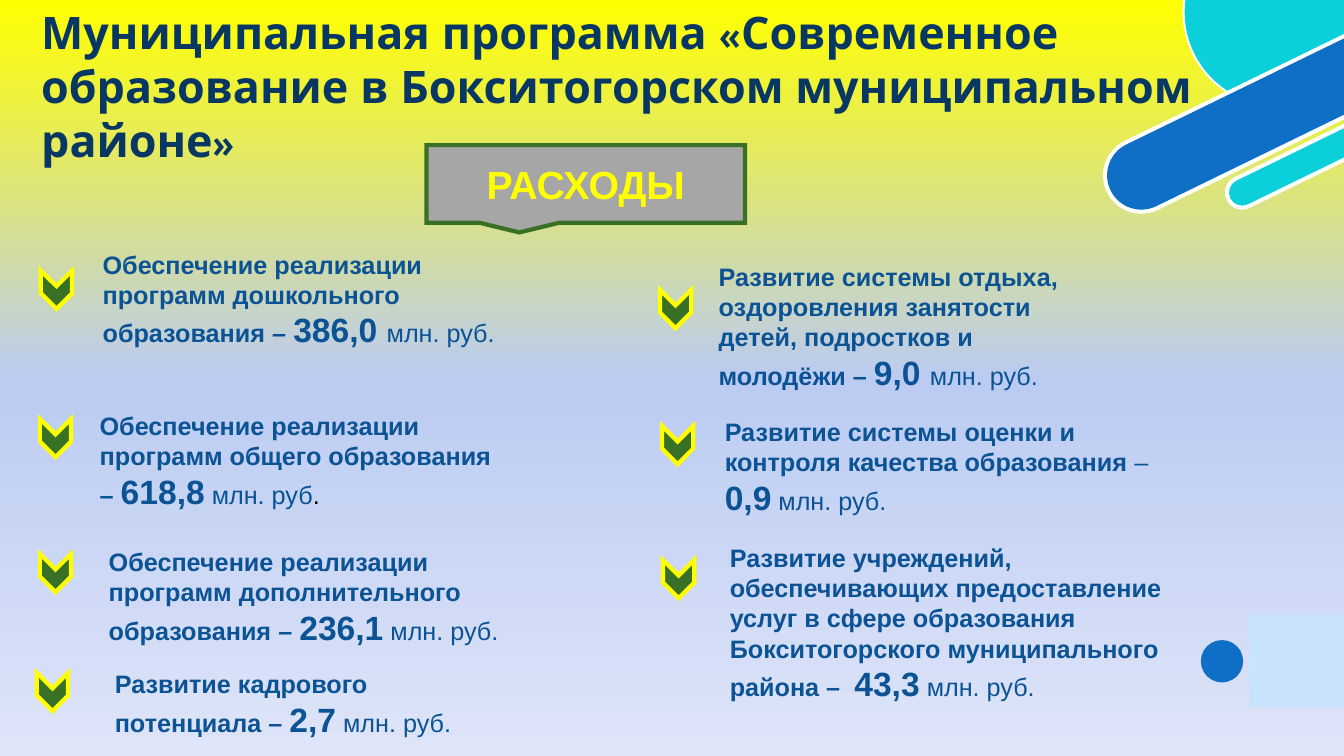
from copy import deepcopy
from math import asin, cos, pi, radians, sin, tan

from lxml.etree import SubElement
from pptx import Presentation
from pptx.dml.color import RGBColor
from pptx.enum.shapes import MSO_SHAPE
from pptx.enum.text import MSO_ANCHOR, PP_ALIGN
from pptx.oxml.ns import qn
from pptx.util import Pt

PX = 9144
WIDTH, HEIGHT = 1333, 750
TILT = radians(26)

COLORS = {
    "yellow": "FFFF00",
    "sky": "BBCBF2",
    "mist": "DEE5F8",
    "blue": "0F6FC6",
    "teal": "0BD0D9",
    "white": "FFFFFF",
    "pale": "C8E3FB",
    "navy": "083763",
    "text": "0B5394",
    "black": "000000",
    "green": "387026",
    "gray": "A6A6A6",
}

EXPENSES = [
    ((92, 242, 440, 111), (37, 272), [
        ("Обеспечение реализации программ дошкольного образования", 18, "b"),
        (" – ", 18, "bi"), ("386,0 ", 24, "b"), ("млн. руб.", 18, "")]),
    ((89, 402, 425, 111), (36, 419), [
        ("Обеспечение реализации программ общего образования – ", 18, "b"),
        ("618,8", 24, "b"), (" ", 18, "b"), ("млн. руб", 18, ""),
        (".", 18, "", "black")]),
    ((98, 537, 455, 111), (36, 553), [
        ("Обеспечение реализации программ дополнительного образования ", 18, "b"),
        ("– ", 18, "bi"), ("236,1", 24, "b"), (" ", 18, "b"),
        ("млн. руб.", 18, "")]),
    ((104, 658, 375, 81), (33, 671), [
        ("Развитие кадрового потенциала – ", 18, "b"),
        ("2,7", 24, "b"), (" ", 18, "b"), ("млн. руб.", 18, "")]),
    ((703, 254, 380, 141), (651, 291), [
        ("Развитие системы отдыха, оздоровления занятости детей, "
         "подростков и молодёжи – ", 18, "b"),
        ("9,0 ", 24, "b"), ("млн. руб.", 18, "")]),
    ((709, 408, 476, 111), (653, 426), [
        ("Развитие системы оценки и контроля качества образования ", 18, "b"),
        ("– ", 18, ""), ("0,9", 24, "b"), (" млн. руб.", 18, "")]),
    ((714, 533, 456, 172), (654, 559), [
        ("Развитие учреждений, обеспечивающих предоставление услуг в сфере "
         "образования Бокситогорского муниципального района –  ", 18, "b"),
        ("43,3", 24, "b"), (" ", 18, "b"), ("млн. руб.", 18, "")]),
]


def rgb(color):
    return RGBColor.from_string(COLORS[color])


def emu(lengths):
    return [round(length * PX) for length in lengths]


def paint(shape, fill, line=None):
    shape.shadow.inherit = False
    shape.fill.solid()
    shape.fill.fore_color.rgb = rgb(fill)
    if line:
        shape.line.color.rgb = rgb(line)
        shape.line.width = Pt(3)
        outline = shape.element.find(".//" + qn("a:ln"))
        SubElement(outline, qn("a:miter")).set("lim", "800000")
    else:
        shape.line.fill.background()


def add_background(page):
    fill = page.background.fill
    fill.gradient()
    fill.gradient_angle = 270
    stop_list = page.element.find(".//" + qn("a:gsLst"))
    stop_list.insert(1, deepcopy(stop_list[0]))
    stops = zip(fill.gradient_stops, (0, 0.5, 1), ("yellow", "sky", "mist"))
    for stop, position, color in stops:
        stop.position = position
        stop.color.rgb = rgb(color)


def add_shape(page, kind, frame, fill, line=None):
    shape = page.shapes.add_shape(kind, *emu(frame))
    paint(shape, fill, line)
    return shape


def arc(x, y, radius, start, end):
    step = (end - start) / 2
    reach = 4 / 3 * tan(step / 4)

    def place(angle, pull):
        return (x + radius * (cos(angle) - pull * sin(angle)),
                y + radius * (sin(angle) + pull * cos(angle)))

    points = [place(start, 0)]
    for angle in (start, start + step):
        points += [place(angle, reach), place(angle + step, -reach),
                   place(angle + step, 0)]
    return points


def add_curved(page, curve, corners, fill):
    points = [emu(point) for point in curve + corners]
    builder = page.shapes.build_freeform(*points[0], scale=1.0)
    builder.add_line_segments(points[1:], close=True)
    shape = builder.convert_to_shape()
    paint(shape, fill)
    segments = shape.element.findall(".//" + qn("a:lnTo"))
    for first in range(0, len(curve) - 1, 3):
        bend, *others = segments[first:first + 3]
        bezier = bend.getparent().makeelement(qn("a:cubicBezTo"))
        bend.addprevious(bezier)
        for segment in (bend, *others):
            bezier.append(segment[0])
            segment.getparent().remove(segment)


def add_disc(page, x, y, radius, fill):
    curve = arc(x, y, radius, pi / 3, pi + asin(y / radius))
    add_curved(page, curve, [(WIDTH, 0), (WIDTH, 40)], fill)


def add_bar(page, x, y, radius, fill):
    edge = y - (WIDTH - x) * tan(TILT)
    half = radius / cos(TILT)
    curve = arc(x, y, radius, pi / 2 - TILT, 3 * pi / 2 - TILT)
    add_curved(page, curve, [(WIDTH, edge - half), (WIDTH, edge + half)], fill)


def add_runs(para, runs, font):
    for text, size, style, color in runs:
        span = para.add_run()
        span.text = text
        span.font.name = font
        span.font.size = Pt(size)
        span.font.bold = "b" in style
        span.font.italic = "i" in style
        span.font.color.rgb = rgb(color)


def add_text(page, frame, runs, font="Arial"):
    box = page.shapes.add_textbox(*emu(frame))
    box.text_frame.word_wrap = True
    add_runs(box.text_frame.paragraphs[0], runs, font)


def add_expense(page, frame, corner, runs):
    colored = [run if len(run) == 4 else (*run, "text") for run in runs]
    add_text(page, frame, colored)
    marker = add_shape(page, MSO_SHAPE.CHEVRON, (*corner, 38, 31), "green", "yellow")
    marker.rotation = 90


def add_callout(page):
    callout = add_shape(page, MSO_SHAPE.RECTANGULAR_CALLOUT,
                        (423, 144, 316, 77), "gray", "green")
    callout.text_frame.vertical_anchor = MSO_ANCHOR.MIDDLE
    para = callout.text_frame.paragraphs[0]
    para.alignment = PP_ALIGN.CENTER
    add_runs(para, [("РАСХОДЫ", 28, "b", "yellow")], "Arial")


def add_decoration(page):
    add_shape(page, MSO_SHAPE.OVAL, (1191, 635, 42, 42), "blue")
    add_shape(page, MSO_SHAPE.RECTANGLE, (1239, 610, 94, 91), "pale")
    for radius, color in ((95, "white"), (93, "teal")):
        add_disc(page, 1268, 12, radius, color)
    for x, y, radius, color in ((1132, 174, 38, "blue"), (1232, 191, 17, "teal")):
        add_bar(page, x, y, radius, "white")
        add_bar(page, x, y, radius - 4, color)


def main():
    deck = Presentation()
    deck.slide_width, deck.slide_height = emu((WIDTH, HEIGHT))
    page = deck.slides.add_slide(deck.slide_layouts[6])
    add_background(page)
    add_decoration(page)
    title = ("Муниципальная программа «Современное образование "
             "в Бокситогорском муниципальном районе»")
    add_text(page, (31, 0, 1191, 172), [(title, 32, "b", "navy")], "League Spartan")
    for frame, corner, runs in EXPENSES:
        add_expense(page, frame, corner, runs)
    add_callout(page)
    deck.save("out.pptx")


if __name__ == "__main__":
    main()
